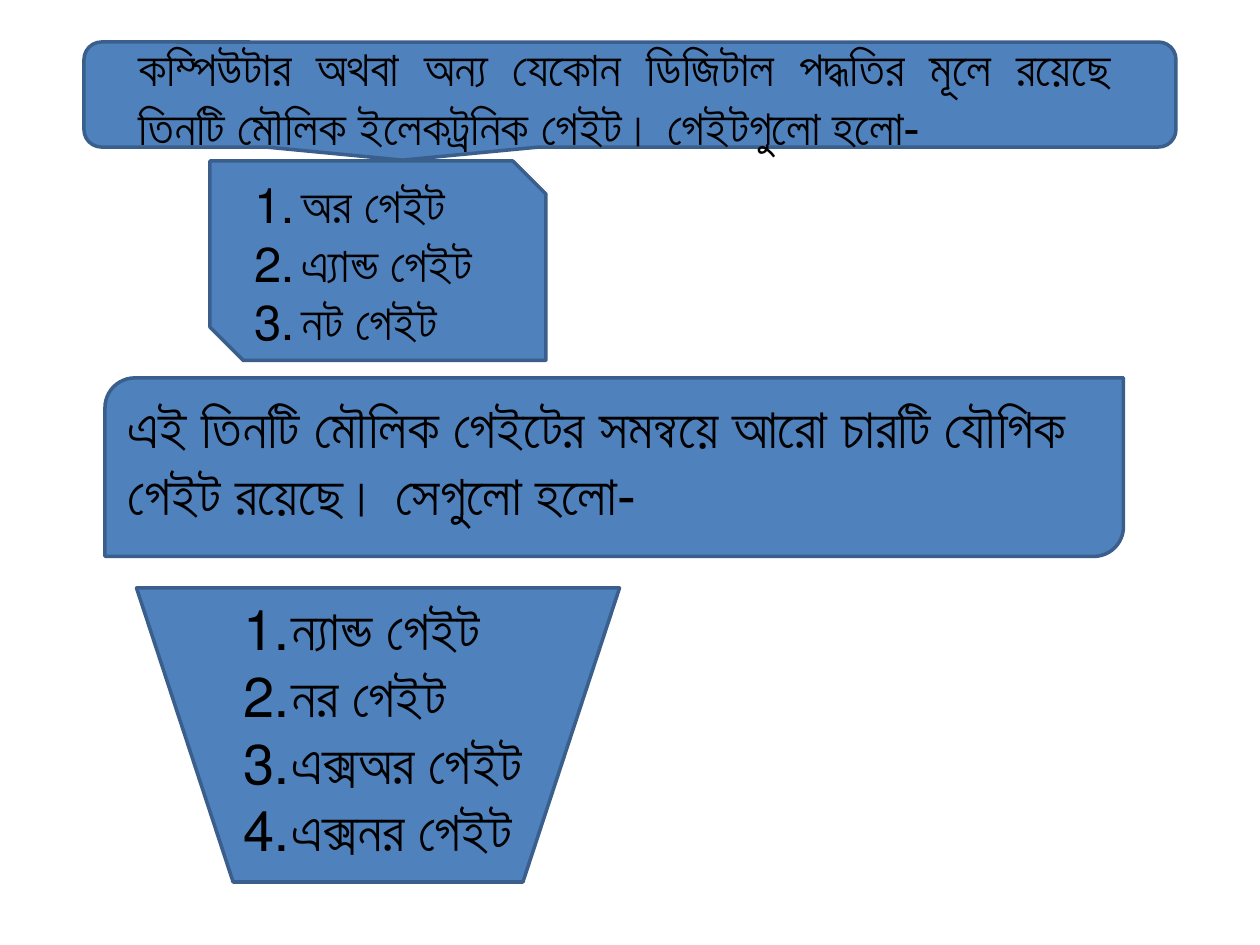
import pptx
import pptx.util
import pptx.dml.color
import pptx.enum.shapes
import pptx.enum.text
import pptx.oxml.ns
import lxml.etree

PANEL_BLUE = pptx.dml.color.RGBColor(0x4F, 0x81, 0xBD)
EDGE_BLUE = pptx.dml.color.RGBColor(0x3A, 0x5F, 0x8C)
BLACK = pptx.dml.color.RGBColor(0, 0, 0)
FONT = "Arial"
SHAPE = pptx.enum.shapes.MSO_SHAPE
ALIGN = pptx.enum.text.PP_ALIGN

deck = pptx.Presentation()
deck.slide_width = pptx.util.Inches(10)
deck.slide_height = pptx.util.Inches(7.5)
CELL = deck.slide_width / 120  # the slide is a grid of 120 columns by 90 rows

slide = deck.slides.add_slide(deck.slide_layouts.get_by_name("Two Content"))
intro = slide.shapes.title
basic_gates, compound_gates = (slide.placeholders[i] for i in (1, 2))


def cells(*lengths):
    return [round(length * CELL) for length in lengths]


def write(holder, box, lines, size, align=ALIGN.LEFT, numbered=False):
    """Place a text holder in front of the panels and fill it."""
    slide.shapes.element.append(holder.element)
    holder.left, holder.top, holder.width, holder.height = cells(*box)
    frame = holder.text_frame
    frame.word_wrap = True
    frame.auto_size = pptx.enum.text.MSO_AUTO_SIZE.SHAPE_TO_FIT_TEXT
    frame.vertical_anchor = pptx.enum.text.MSO_ANCHOR.TOP
    frame.text = "\n".join(lines)
    for paragraph in frame.paragraphs:
        paragraph.alignment = align
        paragraph.space_before = pptx.util.Pt(0)
        paragraph.font.name = FONT
        paragraph.font.size = pptx.util.Pt(size)
        paragraph.font.color.rgb = BLACK
        if numbered:
            properties = paragraph.font._element.getparent()
            indent = pptx.util.Inches(0.38)
            properties.set("marL", str(indent))
            properties.set("indent", str(-indent))
            number = lxml.etree.Element(pptx.oxml.ns.qn("a:buAutoNum"), type="arabicPeriod")
            paragraph.font._element.addprevious(number)


panels = [
    (SHAPE.FLOWCHART_MANUAL_OPERATION, (13, 56, 46, 28)),
    (SHAPE.ROUND_2_DIAG_RECTANGLE, (10, 36, 97, 17)),
    (SHAPE.ROUNDED_RECTANGULAR_CALLOUT, (8, 4, 104, 10)),
    (SHAPE.SNIP_2_DIAG_RECTANGLE, (20, 15.33, 32, 19)),
]
for outline, box in panels:
    panel = slide.shapes.add_shape(outline, *cells(*box))
    panel.shadow.inherit = False
    panel.fill.solid()
    panel.fill.fore_color.rgb = PANEL_BLUE
    panel.line.color.rgb = EDGE_BLUE
    panel.line.width = pptx.util.Pt(2)

write(basic_gates, (23, 16, 26, 18.1),
      ["অর গেইট", "এ্যান্ড গেইট", "নট গেইট"], 28, numbered=True)
write(intro, (12, 3, 95, 12.5),
      ["কম্পিউটার অথবা অন্য যেকোন ডিজিটাল পদ্ধতির মূলে রয়েছে "
       "তিনটি মৌলিক ইলেকট্রনিক গেইট। গেইটগুলো হলো-"], 28, align=ALIGN.JUSTIFY)
statement_box = (11, 36.8, 100, 14.2)
statement = slide.shapes.add_textbox(*cells(*statement_box))
write(statement, statement_box,
      ["এই তিনটি মৌলিক গেইটের সমন্বয়ে আরো চারটি যৌগিক "
       "গেইট রয়েছে। সেগুলো হলো-"], 32)
write(compound_gates, (22, 56, 43, 27.1),
      ["ন্যান্ড গেইট", "নর গেইট", "এক্সঅর গেইট", "এক্সনর গেইট"], 32, numbered=True)

deck.save("out.pptx")
